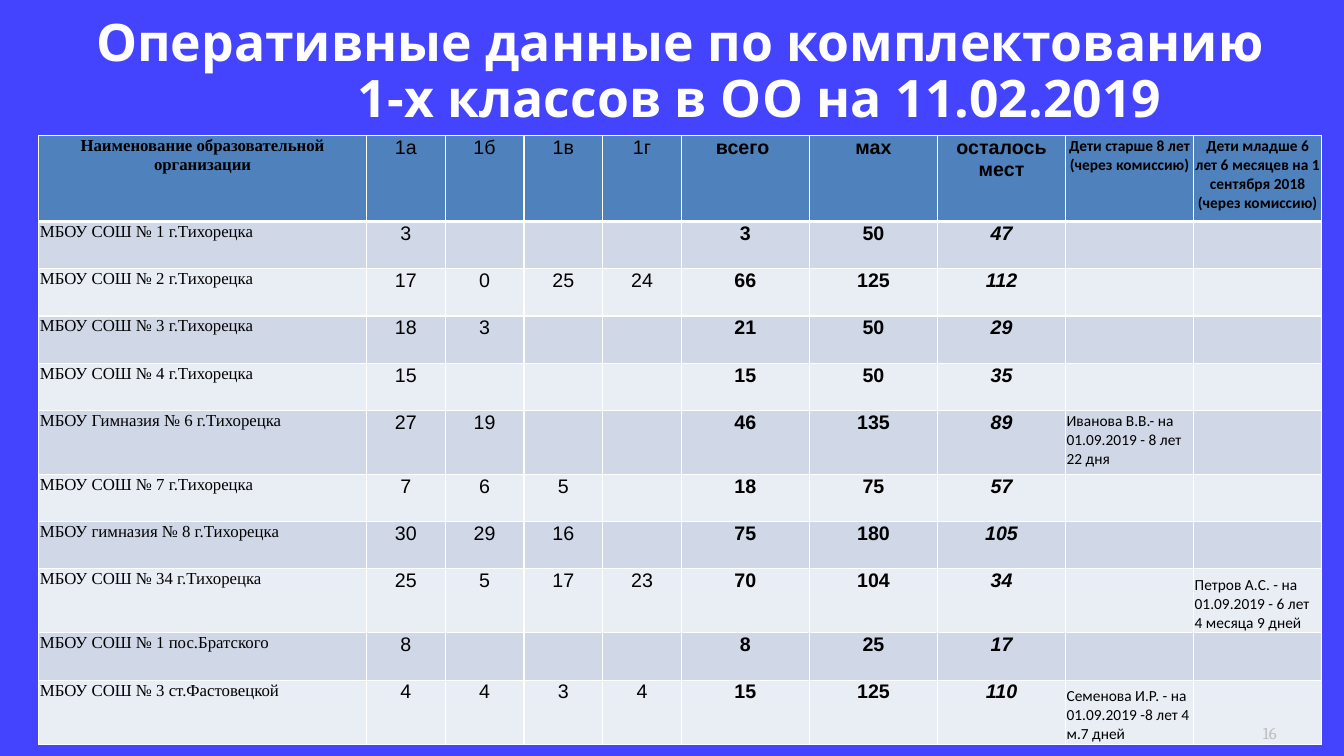
from dataclasses import dataclass

from lxml import etree
from pptx import Presentation
from pptx import util as u
from pptx.dml.color import RGBColor
from pptx.enum import text
from pptx.oxml import ns

PX = 9525
COLORS = {
    "background": "4444FF",
    "white": "FFFFFF",
    "black": "000000",
    "header": "4F81BD",
    "odd": "D0D8E8",
    "even": "E9EDF4",
    "number": "BDBDBD",
}
LEFT, CENTER, RIGHT = text.PP_ALIGN.LEFT, text.PP_ALIGN.CENTER, text.PP_ALIGN.RIGHT
TOP, MIDDLE, BOTTOM = text.MSO_ANCHOR.TOP, text.MSO_ANCHOR.MIDDLE, text.MSO_ANCHOR.BOTTOM


@dataclass(frozen=True)
class Style:
    font: str
    size: float
    color: str = "black"
    bold: bool = False
    italic: bool = False
    align: text.PP_ALIGN = CENTER


@dataclass(frozen=True)
class Box:
    x: int
    y: int
    w: int
    h: int


@dataclass(frozen=True)
class Column:
    heading: str
    width: int
    heading_style: Style
    style: Style


@dataclass(frozen=True)
class School:
    name: str
    classes: tuple[int, ...]
    total: int
    limit: int
    left: int
    older: str = ""
    younger: str = ""
    note_anchor: text.MSO_ANCHOR = TOP

    def values(self) -> list[str]:
        classes = [str(n) for n in self.classes] + [""] * (4 - len(self.classes))
        totals = [str(n) for n in (self.total, self.limit, self.left)]
        return [self.name, *classes, *totals, self.older, self.younger]


TITLE = Style("Noto Sans", 36.9, "white", bold=True)
PAGE_NUMBER = Style("Cambria", 12, "number", align=RIGHT)
NAME = Style("Times New Roman", 12, align=LEFT)
NAME_HEADING = Style("Times New Roman", 12, bold=True)
COUNT = Style("Arial", 14)
TOTAL = Style("Arial", 14, bold=True)
REMAINING = Style("Arial", 14, bold=True, italic=True)
NOTE = Style("Calibri", 11, align=LEFT)
NOTE_HEADING = Style("Calibri", 11, bold=True)

COLUMNS = [
    Column("Наименование образовательной организации", 312, NAME_HEADING, NAME),
    *(Column(f"1{letter}", 75, COUNT, COUNT) for letter in "абвг"),
    Column("всего ", 122, TOTAL, TOTAL),
    Column("мах", 122, TOTAL, TOTAL),
    Column("осталось мест", 122, TOTAL, REMAINING),
    Column("Дети старше 8 лет (через комиссию)", 122, NOTE_HEADING, NOTE),
    Column("Дети младше 6 лет 6 месяцев на 1 сентября 2018 (через комиссию)",
           122, NOTE_HEADING, NOTE),
]
SCHOOLS = [
    School("МБОУ СОШ № 1 г.Тихорецка", (3,), 3, 50, 47),
    School("МБОУ СОШ № 2 г.Тихорецка", (17, 0, 25, 24), 66, 125, 112),
    School("МБОУ СОШ № 3 г.Тихорецка", (18, 3), 21, 50, 29),
    School("МБОУ СОШ № 4 г.Тихорецка", (15,), 15, 50, 35),
    School("МБОУ Гимназия № 6 г.Тихорецка", (27, 19), 46, 135, 89,
           older="Иванова В.В.- на 01.09.2019 - 8 лет 22 дня"),
    School("МБОУ СОШ № 7 г.Тихорецка", (7, 6, 5), 18, 75, 57),
    School("МБОУ гимназия № 8 г.Тихорецка", (30, 29, 16), 75, 180, 105),
    School("МБОУ СОШ № 34 г.Тихорецка", (25, 5, 17, 23), 70, 104, 34,
           younger="Петров А.С. - на 01.09.2019 - 6 лет 4 месяца 9 дней",
           note_anchor=BOTTOM),
    School("МБОУ СОШ № 1 пос.Братского", (8,), 8, 25, 17),
    School("МБОУ СОШ № 3 ст.Фастовецкой", (4, 4, 3, 4), 15, 125, 110,
           older="Семенова И.Р. - на 01.09.2019 -8 лет 4 м.7 дней",
           note_anchor=BOTTOM),
]
HEADER_HEIGHT, ROW_HEIGHT, NOTE_ROW_HEIGHT = 82, 45, 61


def px(n: int) -> u.Emu:
    return u.Emu(n * PX)


def rgb(name: str) -> RGBColor:
    return RGBColor.from_string(COLORS[name])


def write(tf, content: str, style: Style) -> None:
    tf.text = content
    tf.word_wrap = True
    for p in tf.paragraphs:
        p.alignment = style.align
        for r in p.runs:
            r.font.name = style.font
            r.font.size = u.Pt(style.size)
            r.font.bold = style.bold
            r.font.italic = style.italic
            r.font.color.rgb = rgb(style.color)


def add_text(s, box: Box, content: str, style: Style, anchor: text.MSO_ANCHOR):
    tf = s.shapes.add_textbox(px(box.x), px(box.y), px(box.w), px(box.h)).text_frame
    write(tf, content, style)
    tf.vertical_anchor = anchor
    tf.margin_left = tf.margin_right = 0
    return tf


def set_borders(cell, top: int, bottom: int) -> None:
    tc_pr = cell._tc.get_or_add_tcPr()
    for side, width in (("L", 1), ("R", 1), ("T", top), ("B", bottom)):
        ln = etree.SubElement(tc_pr, ns.qn(f"a:ln{side}"), w=str(u.Pt(width)))
        fill = etree.SubElement(ln, ns.qn("a:solidFill"))
        etree.SubElement(fill, ns.qn("a:srgbClr"), val=COLORS["white"])


def fill_cell(cell, content: str, style: Style, fill: str, anchor: text.MSO_ANCHOR,
              top: int = 1, bottom: int = 1) -> None:
    set_borders(cell, top, bottom)
    cell.fill.solid()
    cell.fill.fore_color.rgb = rgb(fill)
    cell.margin_left = cell.margin_right = cell.margin_top = px(1)
    cell.margin_bottom = 0
    cell.vertical_anchor = anchor
    if content:
        write(cell.text_frame, content, style)


def add_school_table(s, x: int, y: int) -> None:
    heights = [HEADER_HEIGHT] + [
        NOTE_ROW_HEIGHT if school.older or school.younger else ROW_HEIGHT
        for school in SCHOOLS
    ]
    width = sum(column.width for column in COLUMNS)
    table = s.shapes.add_table(len(heights), len(COLUMNS), px(x), px(y),
                               px(width), px(sum(heights))).table
    table.first_row = table.horz_banding = False
    for row, height in zip(table.rows, heights):
        row.height = px(height)
    for c, column in enumerate(COLUMNS):
        table.columns[c].width = px(column.width)
        fill_cell(table.cell(0, c), column.heading, column.heading_style,
                  "header", TOP, bottom=3)
    for i, school in enumerate(SCHOOLS, 1):
        for c, (column, value) in enumerate(zip(COLUMNS, school.values())):
            anchor = school.note_anchor if column.style is NOTE else TOP
            fill_cell(table.cell(i, c), value, column.style,
                      "odd" if i % 2 else "even", anchor, top=3 if i == 1 else 1)


def main() -> None:
    prs = Presentation()
    prs.slide_width, prs.slide_height = px(1280), px(720)
    s = prs.slides.add_slide(prs.slide_layouts[6])
    s.background.fill.solid()
    s.background.fill.fore_color.rgb = rgb("background")
    title = add_text(s, Box(80, 9, 1136, 120),
                     "Оперативные данные по комплектованию\n1-х классов в ОО на 11.02.2019",
                     TITLE, MIDDLE)
    for p in title.paragraphs:
        p.line_spacing = 0.9
    title.paragraphs[1]._p.get_or_add_pPr().set("marL", str(px(152)))
    add_school_table(s, 37, 129)
    add_text(s, Box(1110, 674, 106, 38), "16", PAGE_NUMBER, BOTTOM)
    prs.save("out.pptx")


if __name__ == "__main__":
    main()
